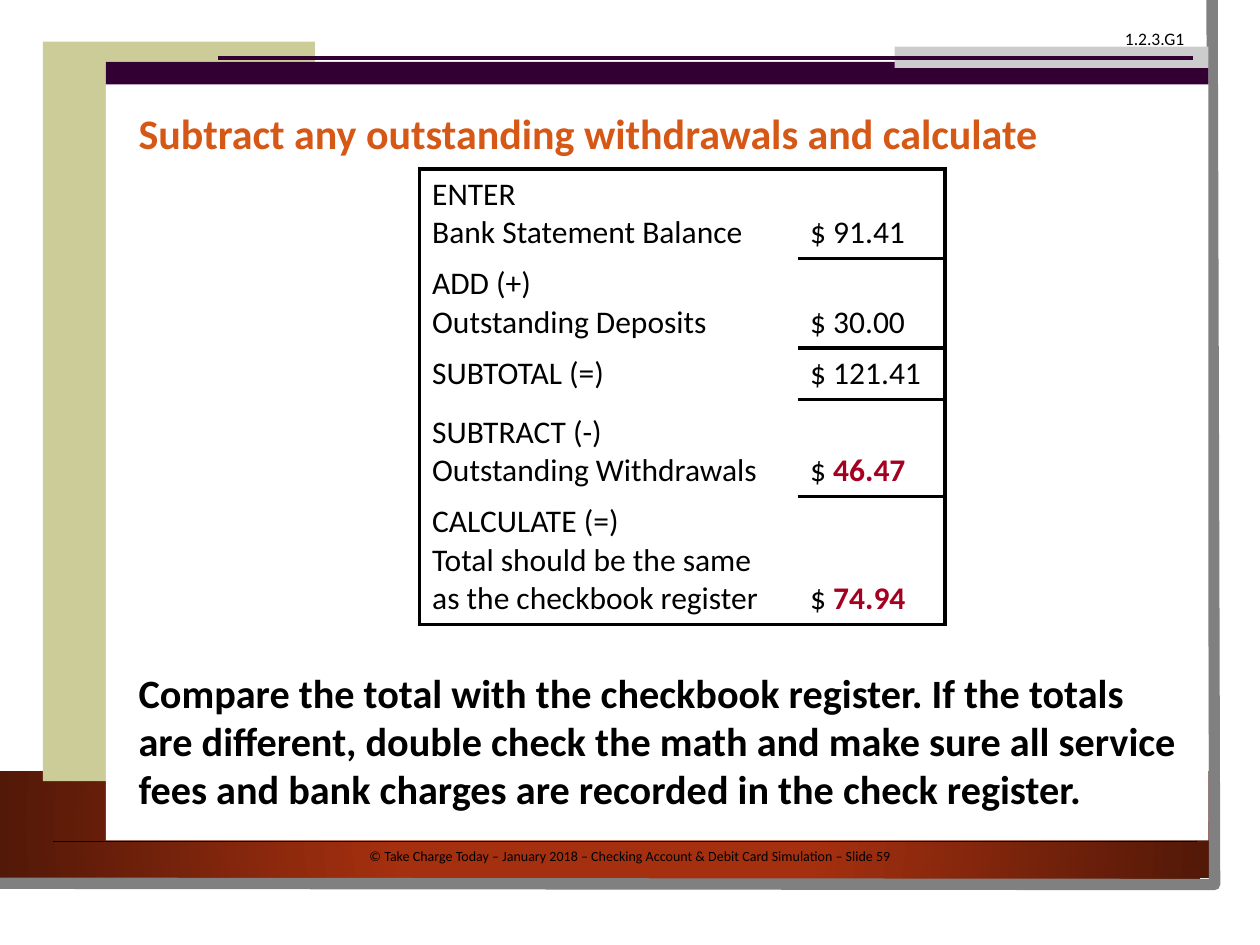
from lxml import etree
from pptx import Presentation
from pptx.dml.color import RGBColor
from pptx.enum.shapes import MSO_CONNECTOR, MSO_SHAPE
from pptx.enum.text import MSO_ANCHOR, MSO_AUTO_SIZE, PP_ALIGN
from pptx.oxml.ns import qn
from pptx.util import Inches, Pt

RECT, STRAIGHT = MSO_SHAPE.RECTANGLE, MSO_CONNECTOR.STRAIGHT
TOP, BOTTOM = MSO_ANCHOR.TOP, MSO_ANCHOR.BOTTOM
LEFT, CENTER = PP_ALIGN.LEFT, PP_ALIGN.CENTER
NO_FIT = MSO_AUTO_SIZE.NONE

BLACK = RGBColor(0x00, 0x00, 0x00)
WHITE = RGBColor(0xFF, 0xFF, 0xFF)
GREY = RGBColor(0x80, 0x80, 0x80)
SILVER = RGBColor(0xCC, 0xCC, 0xCC)
OLIVE = RGBColor(0xCC, 0xCC, 0x99)
PLUM = RGBColor(0x33, 0x00, 0x33)
RUST = RGBColor(0xA5, 0x30, 0x0F)
BROWN = RGBColor(0x52, 0x18, 0x08)
ORANGE = RGBColor(0xD5, 0x58, 0x16)
CRIMSON = RGBColor(0xA5, 0x00, 0x21)

FONT = "Calibri"
COLS, ROWS = 100, 75
UNIT = Inches(0.1)
RULE = Pt(2.25)

BALANCE = [
    (7, ["ENTER", "Bank Statement Balance"], "91.41", False),
    (7, ["ADD (+)", "Outstanding Deposits"], "30.00", False),
    (4.1, ["SUBTOTAL (=)"], "121.41", False),
    (7.7, ["SUBTRACT (-)", "Outstanding Withdrawals"], "46.47", True),
    (10, ["CALCULATE (=)", "Total should be the same as the checkbook register"],
     "74.94", True),
]


def grid(*cells):
    """Turn grid columns and rows into lengths."""
    return [round(c * UNIT) for c in cells]


class Deck:
    """Holds the style and the current slide, and draws on a grid."""

    def __init__(self):
        self.prs = Presentation()
        self.prs.slide_width, self.prs.slide_height = grid(COLS, ROWS)
        self.s = self.prs.slides.add_slide(self.prs.slide_layouts[1])

    def run(self, p, text, size, color=BLACK, bold=False):
        r = p.add_run()
        r.text = text
        r.font.name, r.font.size, r.font.bold = FONT, Pt(size), bold
        r.font.color.rgb = color

    def rect(self, at, color):
        sp = self.s.shapes.add_shape(RECT, *grid(*at))
        sp.shadow.inherit = False
        sp.fill.solid()
        sp.fill.fore_color.rgb = color
        sp.line.fill.background()
        return sp

    def glow(self, at, inner, outer):
        sp = self.rect(at, inner)
        sp.fill.gradient()
        stops = zip(sp.fill.gradient_stops, (0.34, 1), (inner, outer))
        for stop, position, color in stops:
            stop.position, stop.color.rgb = position, color
        grad = sp.element.spPr.find(qn("a:gradFill"))
        grad.remove(grad.find(qn("a:lin")))
        path = etree.SubElement(grad, qn("a:path"), path="circle")
        etree.SubElement(path, qn("a:fillToRect"), l="50000", t="50000", r="50000", b="50000")

    def outline(self, points, color, width):
        start, *rest = [grid(*point) for point in points]
        builder = self.s.shapes.build_freeform(*start)
        builder.add_line_segments(rest, close=False)
        sp = builder.convert_to_shape()
        sp.shadow.inherit = False
        sp.fill.background()
        sp.line.color.rgb, sp.line.width = color, Pt(width)

    def line(self, left, right, row, color, width):
        sp = self.s.shapes.add_connector(STRAIGHT, *grid(left, row, right, row))
        sp.line.color.rgb, sp.line.width = color, Pt(width)
        etree.SubElement(sp.element.spPr, qn("a:effectLst"))

    def text(self, at, text, size, align=LEFT):
        tf = self.s.shapes.add_textbox(*grid(*at)).text_frame
        tf.word_wrap = True
        p = tf.paragraphs[0]
        p.alignment = align
        self.run(p, text, size)

    def placeholder(self, index, at, text, size, color):
        sp = self.s.placeholders[index]
        sp.left, sp.top, sp.width, sp.height = grid(*at)
        self.s.shapes.element.append(sp.element)
        tf = sp.text_frame
        tf.word_wrap, tf.auto_size, tf.vertical_anchor = True, NO_FIT, TOP
        p = tf.paragraphs[0]
        p.alignment, p.space_before = LEFT, Pt(0)
        pPr = p._p.get_or_add_pPr()
        pPr.set("marL", "0")
        pPr.set("indent", "0")
        etree.SubElement(pPr, qn("a:buNone"))
        self.run(p, text, size, color, True)

    def borders(self, cell, sides):
        tcPr = cell._tc.get_or_add_tcPr()
        for side in "LRTB":
            ln = etree.SubElement(tcPr, qn("a:ln" + side), w=str(RULE))
            if side in sides:
                fill = etree.SubElement(ln, qn("a:solidFill"))
                etree.SubElement(fill, qn("a:srgbClr"), val=str(BLACK))
            else:
                etree.SubElement(ln, qn("a:noFill"))

    def cell(self, cell, sides):
        self.borders(cell, sides)
        cell.fill.background()
        cell.vertical_anchor = BOTTOM
        return cell.text_frame

    def balance_table(self, at, widths, rows, size):
        frame = self.s.shapes.add_table(len(rows), len(widths), *grid(*at))
        table = frame.table
        table.first_row = table.horz_banding = False
        for column, width in zip(table.columns, grid(*widths)):
            column.width = width
        for i, (height, labels, amount, marked) in enumerate(rows):
            table.rows[i].height = grid(height)[0]
            top = "T" if i == 0 else ""
            bottom = "B" if i == len(rows) - 1 else ""
            tf = self.cell(table.cell(i, 0), "L" + top + bottom)
            for j, label in enumerate(labels):
                self.run(tf.add_paragraph() if j else tf.paragraphs[0], label, size)
            p = self.cell(table.cell(i, 1), "RB" + ("T" if i < len(rows) else "")).paragraphs[0]
            self.run(p, "$ ", size)
            self.run(p, amount, size, CRIMSON if marked else BLACK, marked)


def main():
    d = Deck()
    d.rect((0, 0, 98.3, 72.7), WHITE)
    d.glow((0, 61.2, 96, 8.5), RUST, BROWN)
    d.outline([(96.2, 0), (96.4, 70.2), (0, 70.1)], GREY, 6.5)
    d.text((4.2, 66.8, 91.7, 2.4),
           "© Take Charge Today – January 2018 – Checking Account & Debit Card Simulation – Slide 59",
           8, CENTER)
    d.rect((3.4, 3.3, 21.6, 58.7), OLIVE)
    d.rect((8.4, 4.9, 87.5, 61.8), WHITE)
    d.rect((8.4, 4.9, 87.5, 1.8), PLUM)
    d.rect((71, 3.7, 24.9, 1.7), SILVER)
    d.line(17.3, 94.7, 4.6, PLUM, 2)
    d.line(4.2, 95, 66.8, BLACK, 0.75)
    d.text((88.3, 1.7, 7.5, 2.7), "1.2.3.G1", 10)
    d.placeholder(0, (10, 8, 84.2, 5),
                  "Subtract any outstanding withdrawals and calculate", 24, ORANGE)
    d.placeholder(1, (10, 52.5, 85, 12.6),
                  "Compare the total with the checkbook register. If the totals are different, "
                  "double check the math and make sure all service fees and bank charges are "
                  "recorded in the check register.", 23, BLACK)
    d.balance_table((33.3, 13.4, 41.7, 35.8), (30, 11.7), BALANCE, 18)
    d.prs.save("out.pptx")


if __name__ == "__main__":
    main()
